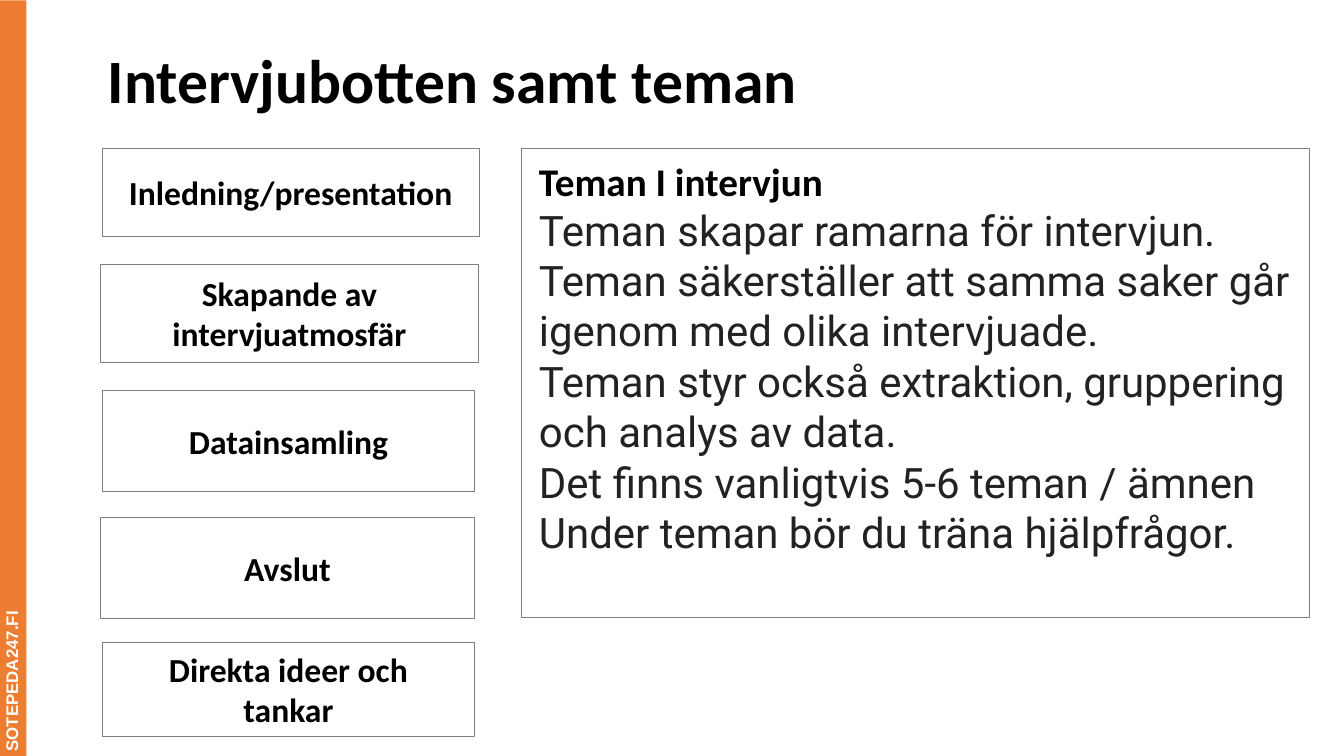
from dataclasses import dataclass

from pptx import Presentation
from pptx import util as u
from pptx.dml.color import RGBColor
from pptx.enum import shapes, text


@dataclass(frozen=True)
class Theme:
    accent: str = "ED7D31"
    paper: str = "FFFFFF"
    ink: str = "000000"
    body_ink: str = "222222"
    border: str = "808080"
    heading_font: str = "Calibri"
    body_font: str = "Roboto"
    banner_font: str = "Arial"
    title_size: int = 88
    body_size: int = 60
    heading_size: int = 56
    step_size: int = 48
    banner_size: int = 24


class SlideBuilder:
    def __init__(self, slide, theme):
        self.slide = slide
        self.theme = theme

    def set_lines(self, shape, lines, anchor, align, margins):
        """Fill a shape with (text, font name, size, colour, bold) paragraphs."""
        frame = shape.text_frame
        side, edge = (u.Cm(margin) for margin in margins)
        settings = {
            "word_wrap": True, "auto_size": text.MSO_AUTO_SIZE.NONE,
            "vertical_anchor": anchor, "margin_left": side,
            "margin_right": side, "margin_top": edge, "margin_bottom": edge,
        }
        for name, value in settings.items():
            setattr(frame, name, value)
        for index, (words, font, size, colour, bold) in enumerate(lines):
            paragraph = frame.paragraphs[0] if index == 0 else frame.add_paragraph()
            paragraph.alignment = align
            run = paragraph.add_run()
            run.text = words
            for name, value in {"name": font, "size": u.Pt(size), "bold": bold}.items():
                setattr(run.font, name, value)
            run.font.color.rgb = RGBColor.from_string(colour)

    def rectangle(self, place, fill, line_width=0):
        box = self.slide.shapes.add_shape(
            shapes.MSO_SHAPE.RECTANGLE, *(u.Cm(length) for length in place))
        box.shadow.inherit = False
        box.fill.solid()
        box.fill.fore_color.rgb = RGBColor.from_string(fill)
        if line_width:
            box.line.color.rgb = RGBColor.from_string(self.theme.border)
            box.line.width = u.Pt(line_width)
        else:
            box.line.fill.background()
        return box

    def banner(self, words, place):
        t = self.theme
        strip = self.rectangle(place, t.accent)
        strip.rotation = 270
        self.set_lines(strip, [(words, t.banner_font, t.banner_size, t.paper, True)],
                       text.MSO_ANCHOR.BOTTOM, text.PP_ALIGN.LEFT, (0.25, 0.25))

    def title(self, words, place):
        t = self.theme
        heading = self.slide.shapes.add_textbox(*(u.Cm(length) for length in place))
        self.set_lines(heading, [(words, t.heading_font, t.title_size, t.ink, True)],
                       text.MSO_ANCHOR.MIDDLE, text.PP_ALIGN.LEFT, (0.25, 0.25))
        heading.text_frame.paragraphs[0].line_spacing = 0.9

    def panel(self, heading, body, place):
        t = self.theme
        lines = [(heading, t.heading_font, t.heading_size, t.ink, True)]
        lines += [(words, t.body_font, t.body_size, t.body_ink, False) for words in body]
        self.set_lines(self.rectangle(place, t.paper, 0.75), lines,
                       text.MSO_ANCHOR.TOP, text.PP_ALIGN.LEFT, (0.9, 0.45))

    def step(self, words, place):
        t = self.theme
        self.set_lines(self.rectangle(place, t.paper, 1),
                       [(words, t.heading_font, t.step_size, t.ink, True)],
                       text.MSO_ANCHOR.MIDDLE, text.PP_ALIGN.CENTER, (0.9, 0.45))


THEMES = [
    "Teman skapar ramarna för intervjun. Teman säkerställer att samma saker "
    "går igenom med olika intervjuade.",
    "Teman styr också extraktion, gruppering och analys av data.",
    "Det finns vanligtvis 5-6 teman / ämnen Under teman bör du träna hjälpfrågor.",
]

# Left, top, width and height in centimetres
INTERVIEW_STEPS = {
    "Inledning/presentation": (5.16, 7.49, 19, 4.42),
    "Skapande av intervjuatmosfär": (5.05, 13.34, 19.08, 4.9),
    "Datainsamling": (5.16, 19.66, 18.77, 5.1),
    "Avslut": (5.08, 26.06, 18.82, 5.1),
    "Direkta ideer och tankar": (5.18, 32.39, 18.72, 4.7),
}


def main():
    deck = Presentation()
    deck.slide_width, deck.slide_height = u.Cm(67.74), u.Cm(38.1)
    builder = SlideBuilder(deck.slides.add_slide(deck.slide_layouts[6]), Theme())
    builder.banner("SOTEPEDA247.FI", (-18.49, 18.29, 38.1, 1.55))
    builder.title("Intervjubotten samt teman", (5.18, 1.57, 61.75, 5.31))
    builder.panel("Teman I intervjun", THEMES, (26.26, 7.47, 39.75, 23.65))
    for words, place in INTERVIEW_STEPS.items():
        builder.step(words, place)
    deck.save("out.pptx")


if __name__ == "__main__":
    main()
